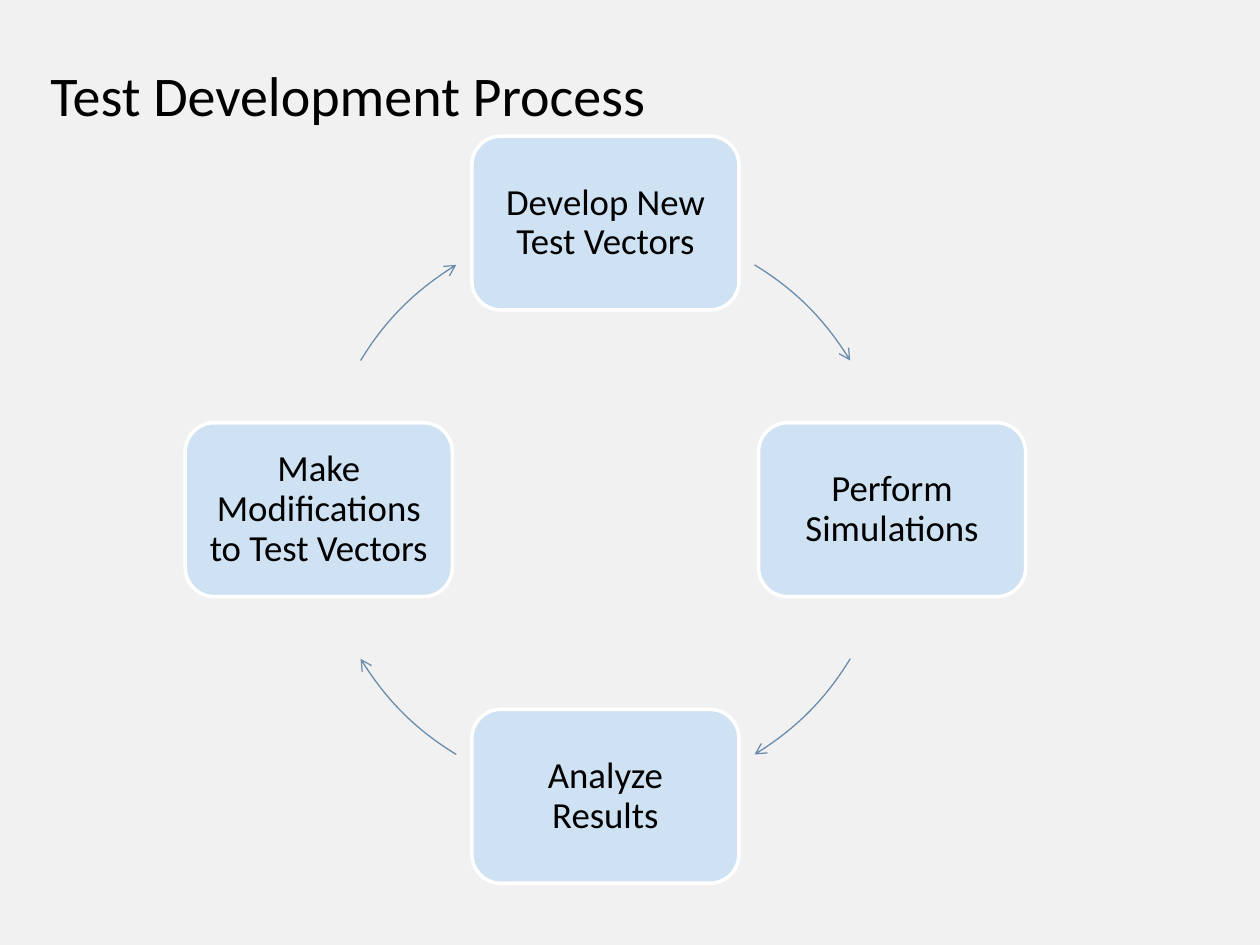
from math import cos, sin, radians
from pptx import Presentation
from pptx.dml.color import RGBColor
from pptx.enum.shapes import MSO_SHAPE as Shape
from pptx.enum.text import MSO_ANCHOR as Anchor, PP_ALIGN as Align
from pptx.oxml.ns import qn
from pptx.util import Inches, Pt
from lxml.etree import SubElement

HUES = {"back": "F1F1F1", "box": "CFE2F3", "edge": "FFFFFF",
        "arrow": "6B8CAB", "text": "000000"}
STEPS = ["Develop New Test Vectors", "Perform Simulations",
         "Analyze Results", "Make Modifications to Test Vectors"]


def hue(name):
    return RGBColor.from_string(HUES[name])


def write(shape, text, size, align, inset, space=1.0):
    frame = shape.text_frame
    frame.word_wrap = True
    frame.vertical_anchor = Anchor.MIDDLE
    frame.margin_left = frame.margin_right = Inches(inset)
    frame.margin_top = frame.margin_bottom = Inches(inset)
    para = frame.paragraphs[0]
    para.alignment = align
    para.line_spacing = space
    run = para.add_run()
    run.text = text
    run.font.size = Pt(size)
    run.font.name = "Calibri"
    run.font.color.rgb = hue("text")


def add_title(slide, text, left, top, width, height):
    title = slide.shapes.title
    title.left, title.top = Inches(left), Inches(top)
    title.width, title.height = Inches(width), Inches(height)
    write(title, text, size=32, align=Align.LEFT, inset=0.1)


def add_step(slide, text, mid_x, mid_y, width=2.12, height=1.38):
    box = slide.shapes.add_shape(
        Shape.ROUNDED_RECTANGLE, Inches(mid_x - width / 2),
        Inches(mid_y - height / 2), Inches(width), Inches(height))
    box.shadow.inherit = False
    box.fill.solid()
    box.fill.fore_color.rgb = hue("box")
    box.line.color.rgb = hue("edge")
    box.line.width = Pt(2)
    write(box, text, size=21, align=Align.CENTER, inset=0.09, space=0.9)


def add_arc(slide, left, top, size, start, end):
    arc = slide.shapes.add_shape(
        Shape.ARC, Inches(left), Inches(top), Inches(size), Inches(size))
    arc.shadow.inherit = False
    arc.fill.background()
    arc.line.color.rgb = hue("arrow")
    arc.line.width = Pt(0.75)
    # Arc angles are stored in 1/60000 degree, adjustments in 1/100000
    for i, angle in enumerate((start, end)):
        arc.adjustments[i] = angle % 360 * 0.6
    SubElement(arc.line._get_or_add_ln(), qn("a:tailEnd"), type="arrow")


def add_cycle(slide, steps, left, top, size):
    radius = size / 2
    turn = 360 / len(steps)
    for i, text in enumerate(steps):
        angle = i * turn - 90
        add_step(slide, text,
                 left + radius * (1 + cos(radians(angle))),
                 top + radius * (1 + sin(radians(angle))))
        # Arrow in the gap before the next step
        middle = angle + turn / 2
        add_arc(slide, left, top, size, middle - 13.65, middle + 13.65)


def main():
    deck = Presentation()
    deck.slide_width, deck.slide_height = Inches(10), Inches(7.5)
    slide = deck.slides.add_slide(deck.slide_layouts[5])
    slide.background.fill.solid()
    slide.background.fill.fore_color.rgb = hue("back")
    add_title(slide, "Test Development Process", 0.3, 0.3, 9.4, 0.9)
    add_cycle(slide, STEPS, 2.53, 1.77, 4.55)
    deck.save("out.pptx")


if __name__ == "__main__":
    main()
